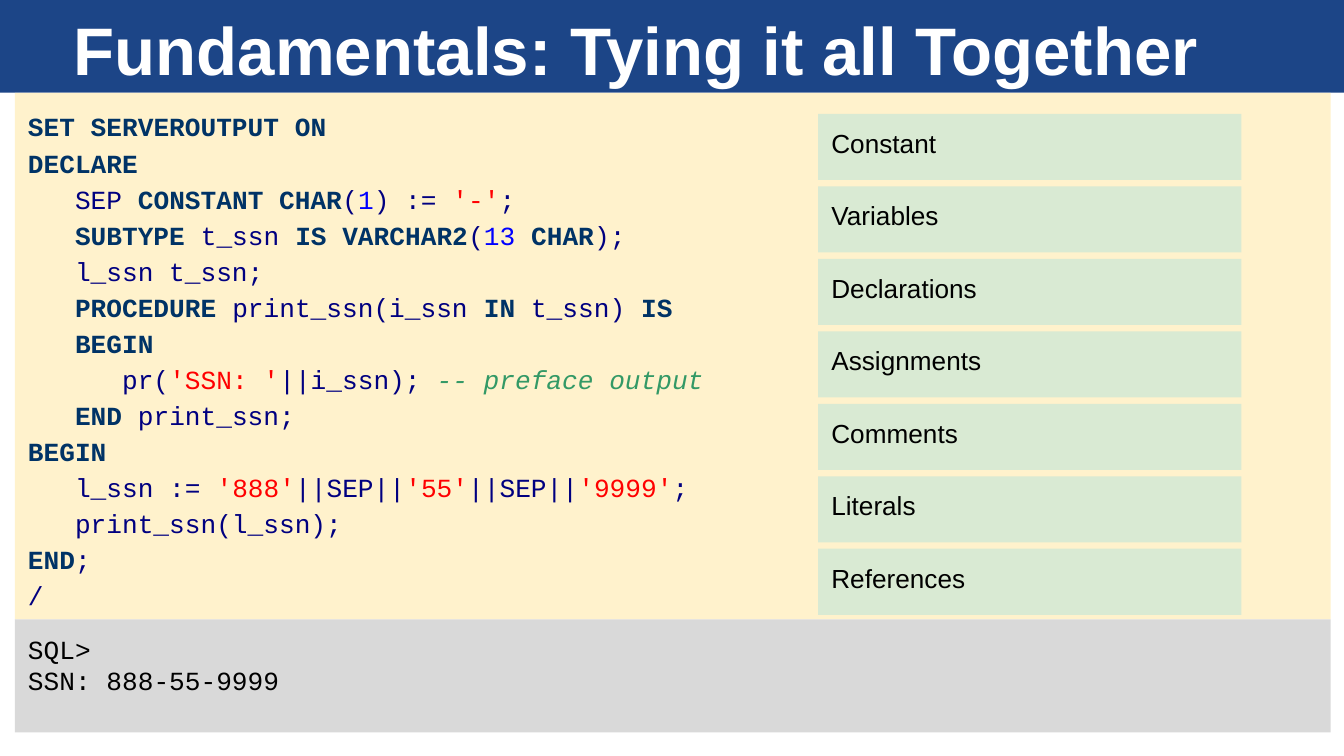
from dataclasses import dataclass
from pptx import Presentation
from pptx import util as u
from pptx.dml.color import RGBColor
from pptx.enum import shapes, text


@dataclass(frozen=True)
class Theme:
    bar: str = "1C4587"
    code: str = "FFF2CC"
    shell: str = "D9D9D9"
    tag: str = "D9EAD3"
    white: str = "FFFFFF"
    black: str = "000000"
    key: str = "003366"
    base: str = "000080"
    num: str = "0000FF"
    quote: str = "FF0000"
    note: str = "339966"
    head: float = 36
    body: float = 14
    sans: str = "Arial"
    mono: str = "Courier New"


THEME = Theme()
INDENT = 25.2
INSET = 7.2
PANEL = dict(left=7.9, width=704.9)

TITLE = "Fundamentals: Tying it all Together"
SHELL = ["SQL>", "SSN: 888-55-9999"]
TAGS = ["Constant", "Variables", "Declarations", "Assignments",
        "Comments", "Literals", "References"]
CODE = [
    (0, [("key", "SET SERVEROUTPUT ON")]),
    (0, [("key", "DECLARE")]),
    (1, [("base", "SEP "), ("key", "CONSTANT CHAR"), ("base", "("), ("num", "1"),
         ("base", ") := "), ("quote", "'-'"), ("base", ";")]),
    (1, [("key", "SUBTYPE"), ("base", " t_ssn "), ("key", "IS VARCHAR2"),
         ("base", "("), ("num", "13 "), ("key", "CHAR"), ("base", ");")]),
    (1, [("base", "l_ssn t_ssn;")]),
    (1, [("key", "PROCEDURE"), ("base", " print_ssn(i_ssn "), ("key", "IN"),
         ("base", " t_ssn) "), ("key", "IS")]),
    (1, [("key", "BEGIN")]),
    (2, [("base", "pr("), ("quote", "'SSN: '"), ("base", "||i_ssn); "),
         ("note", "-- preface output")]),
    (1, [("key", "END"), ("base", " print_ssn;")]),
    (0, [("key", "BEGIN")]),
    (1, [("base", "l_ssn := "), ("quote", "'888'"), ("base", "||SEP||"),
         ("quote", "'55'"), ("base", "||SEP||"), ("quote", "'9999'"), ("base", ";")]),
    (1, [("base", "print_ssn(l_ssn);")]),
    (0, [("key", "END"), ("base", ";")]),
    (0, [("base", "/")]),
]


def write(para, words, font=THEME.sans, size=THEME.body, tone="black",
          bold=False, slant=False):
    run = para.add_run()
    run.text = words
    run.font.name = font
    run.font.size = u.Pt(size)
    run.font.bold = bold
    run.font.italic = slant
    run.font.color.rgb = RGBColor.from_string(getattr(THEME, tone))


def frame(shape, anchor=text.MSO_ANCHOR.TOP):
    area = shape.text_frame
    area.word_wrap = True
    area.auto_size = text.MSO_AUTO_SIZE.NONE
    area.vertical_anchor = anchor
    area.margin_left = area.margin_right = u.Pt(INSET)
    area.margin_top = area.margin_bottom = u.Pt(INSET)
    return area


def lines(area, count):
    paras = [area.paragraphs[0]] + [area.add_paragraph() for _ in range(count - 1)]
    for para in paras:
        para.alignment = text.PP_ALIGN.LEFT
    return paras


def box(slide, tone, left, top, width, height):
    shape = slide.shapes.add_shape(shapes.MSO_SHAPE.RECTANGLE, u.Pt(left),
                                   u.Pt(top), u.Pt(width), u.Pt(height))
    shape.shadow.inherit = False
    shape.fill.solid()
    shape.fill.fore_color.rgb = RGBColor.from_string(getattr(THEME, tone))
    shape.line.fill.background()
    return shape


def header(slide):
    bar = box(slide, "bar", 0, 0, 720, 49.7)
    title = slide.shapes.title
    bar.element.getparent().insert(2, bar.element)
    title.left, title.top = u.Pt(32.4), u.Pt(2.9)
    title.width, title.height = u.Pt(648), u.Pt(46.8)
    para = lines(frame(title, text.MSO_ANCHOR.MIDDLE), 1)[0]
    write(para, TITLE, size=THEME.head, tone="white", bold=True)


def code(slide):
    area = frame(box(slide, "code", top=49.7, height=282.2, **PANEL))
    for para, (level, parts) in zip(lines(area, len(CODE)), CODE):
        para.line_spacing = 1.15
        props = para._p.get_or_add_pPr()
        props.set("marL", str(u.Pt(level * INDENT)))
        props.set("indent", "0")
        for tone, words in parts:
            write(para, words, font=THEME.mono, tone=tone,
                  bold=tone == "key", slant=tone == "note")


def shell(slide):
    area = frame(box(slide, "shell", top=331.9, height=60.5, **PANEL))
    for para, words in zip(lines(area, len(SHELL)), SHELL):
        write(para, words, font=THEME.mono)


def tags(slide):
    for row, words in enumerate(TAGS):
        shape = box(slide, "tag", 438.3, 61 + row * 38.83, 226.8, 35.4)
        write(lines(frame(shape), 1)[0], words)


def main():
    deck = Presentation()
    deck.slide_width, deck.slide_height = u.Pt(720), u.Pt(405)
    slide = deck.slides.add_slide(deck.slide_layouts[5])
    header(slide)
    code(slide)
    shell(slide)
    tags(slide)
    deck.save("out.pptx")


if __name__ == "__main__":
    main()
